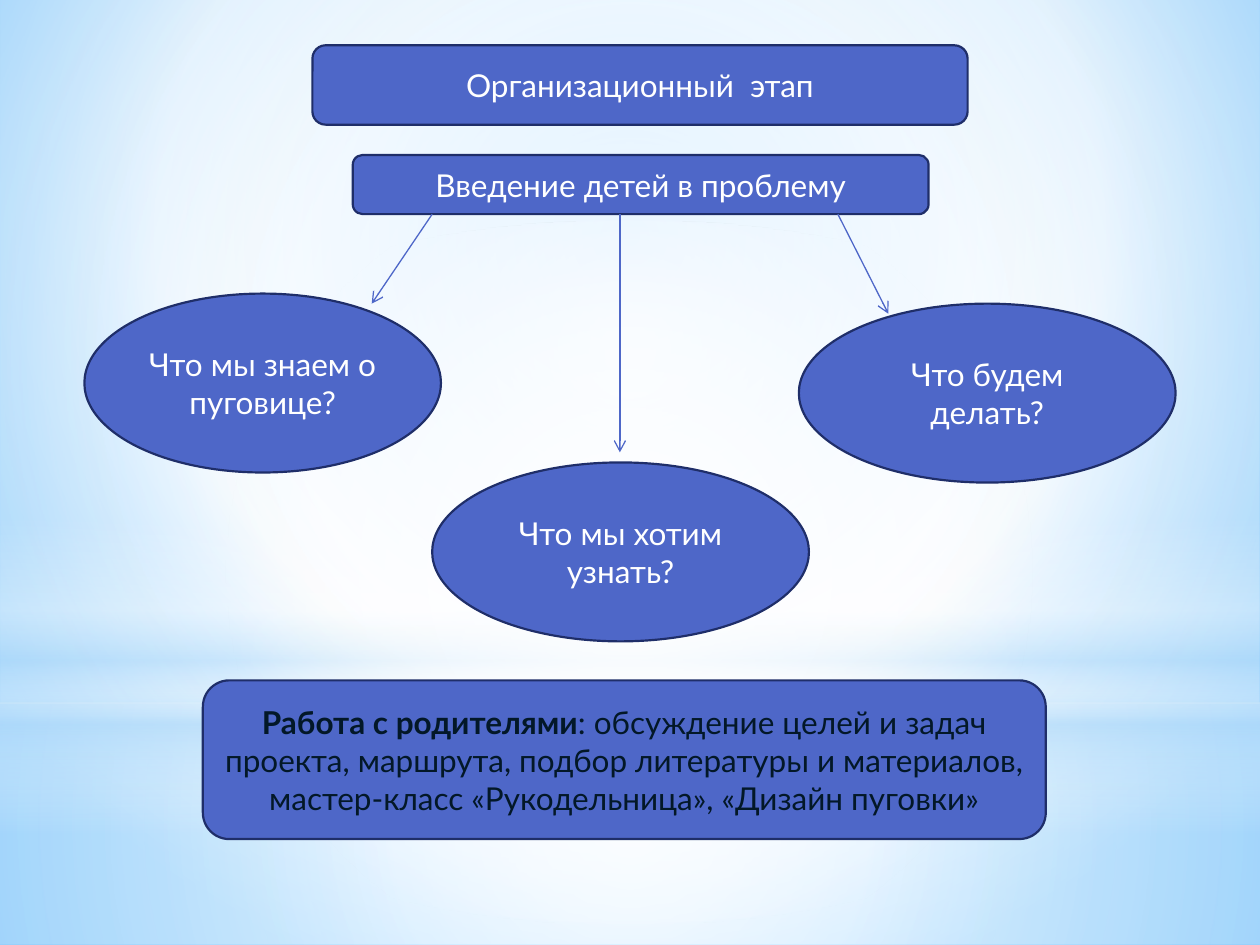
from lxml.etree import SubElement as Sub, Element
from pptx import Presentation
from pptx.dml.color import RGBColor
from pptx.enum.shapes import MSO_CONNECTOR as Line, MSO_SHAPE as Shape
from pptx.enum.text import MSO_ANCHOR as Anchor, PP_ALIGN as Align
from pptx.oxml.ns import qn
from pptx.util import Inches, Pt

BLUE, NAVY, WHITE, DARK = "4E67C8", "1F2E69", "FFFFFF", "031828"
SKY = "B4DCFA"
MID = (50, 50, 50, 50)


def color(code):
    return RGBColor.from_string(code)


def blend(props, stops, to=None):
    """Swap the solid fill in props for a gradient: circular round `to`, or downward."""
    grad = Element(qn("a:gradFill"), rotWithShape="1")
    stage = Sub(grad, qn("a:gsLst"))
    for pos, code, alpha in stops:
        stop = Sub(stage, qn("a:gs"), pos=str(pos * 1000))
        tint = Sub(stop, qn("a:srgbClr"), val=code)
        if alpha < 100:
            Sub(tint, qn("a:alpha"), val=str(alpha * 1000))
    if to:
        ring = Sub(grad, qn("a:path"), path="circle")
        Sub(ring, qn("a:fillToRect"), {k: str(v * 1000) for k, v in zip("ltrb", to)})
    else:
        Sub(grad, qn("a:lin"), ang="5400000", scaled="0")
    props.replace(props.find(qn("a:solidFill")), grad)


deck = Presentation()
deck.slide_width, deck.slide_height = Inches(10), Inches(7.5)
slide = deck.slides.add_slide(deck.slide_layouts[6])
shapes = slide.shapes

# Background glow
slide.background.fill.solid()
back = slide.element.find(".//" + qn("p:bgPr"))
blend(back, [(0, "9ED5FF", 100), (60, WHITE, 100), (100, "5BB9FF", 100)], (20, 10, 20, 60))

glows = [
    (Shape.RECTANGLE, 5.58, 1.92, MID, [(0, WHITE, 91), (37, WHITE, 76), (100, SKY, 79)]),
    (Shape.RECTANGLE, 0, 5.58, MID, [(0, WHITE, 89), (48, WHITE, 62), (100, SKY, 79)]),
    (Shape.RECTANGLE, 4.12, 2.5, None,
     [(0, WHITE, 0), (29, WHITE, 30), (45, SKY, 40), (55, WHITE, 26), (65, SKY, 60),
      (100, WHITE, 0)]),
    (Shape.OVAL, 1.75, 5.58, MID, [(0, WHITE, 100), (56, WHITE, 0)]),
]
for kind, top, high, to, stops in glows:
    glow = shapes.add_shape(kind, 0, Inches(top), Inches(10), Inches(high))
    glow.shadow.inherit = False
    glow.line.fill.background()
    glow.fill.solid()
    blend(glow.element.spPr, stops, to)

# Boxes and ovals: kind, place, text colour, (text, bold) runs
nodes = [
    (Shape.ROUNDED_RECTANGLE, (2.48, 0.36, 5.2, 0.63), WHITE,
     [("Организационный  этап", False)]),
    (Shape.FLOWCHART_ALTERNATE_PROCESS, (2.8, 1.23, 4.57, 0.47), WHITE,
     [("Введение детей в проблему", False)]),
    (Shape.OVAL, (0.67, 2.33, 2.83, 1.42), WHITE, [("Что мы знаем о пуговице?", False)]),
    (Shape.OVAL, (3.43, 3.67, 2.99, 1.42), WHITE, [("Что мы хотим узнать?", False)]),
    (Shape.OVAL, (6.34, 2.41, 2.99, 1.42), WHITE, [("Что будем делать?", False)]),
    (Shape.ROUNDED_RECTANGLE, (1.61, 5.4, 6.69, 1.26), DARK,
     [("Работа с родителями", True),
      (": обсуждение целей и задач проекта, маршрута, подбор литературы и материалов, "
       "мастер-класс «Рукодельница», «Дизайн пуговки»", False)]),
]
for kind, place, ink, runs in nodes:
    node = shapes.add_shape(kind, *map(Inches, place))
    node.shadow.inherit = False
    node.fill.solid()
    node.fill.fore_color.rgb = color(BLUE)
    node.line.color.rgb = color(NAVY)
    node.line.width = Pt(1.25)
    frame = node.text_frame
    frame.word_wrap = True
    frame.vertical_anchor = Anchor.MIDDLE
    para = frame.paragraphs[0]
    para.alignment = Align.CENTER
    for text, bold in runs:
        run = para.add_run()
        run.text = text
        for name, value in {"name": "Lato", "size": Pt(18), "bold": bold}.items():
            setattr(run.font, name, value)
        run.font.color.rgb = color(ink)

# Arrows from the problem box to the ovals
for x, end in [(3.43, (2.95, 2.41)), (6.65, (7.05, 2.49)), (4.92, (4.92, 3.59))]:
    arrow = shapes.add_connector(Line.STRAIGHT, *map(Inches, (x, 1.7, *end)))
    arrow.line.color.rgb = color(BLUE)
    arrow.line.width = Pt(0.75)
    Sub(arrow.line._get_or_add_ln(), qn("a:tailEnd"), type="arrow")
    Sub(arrow.element.spPr, qn("a:effectLst"))

deck.save("out.pptx")
